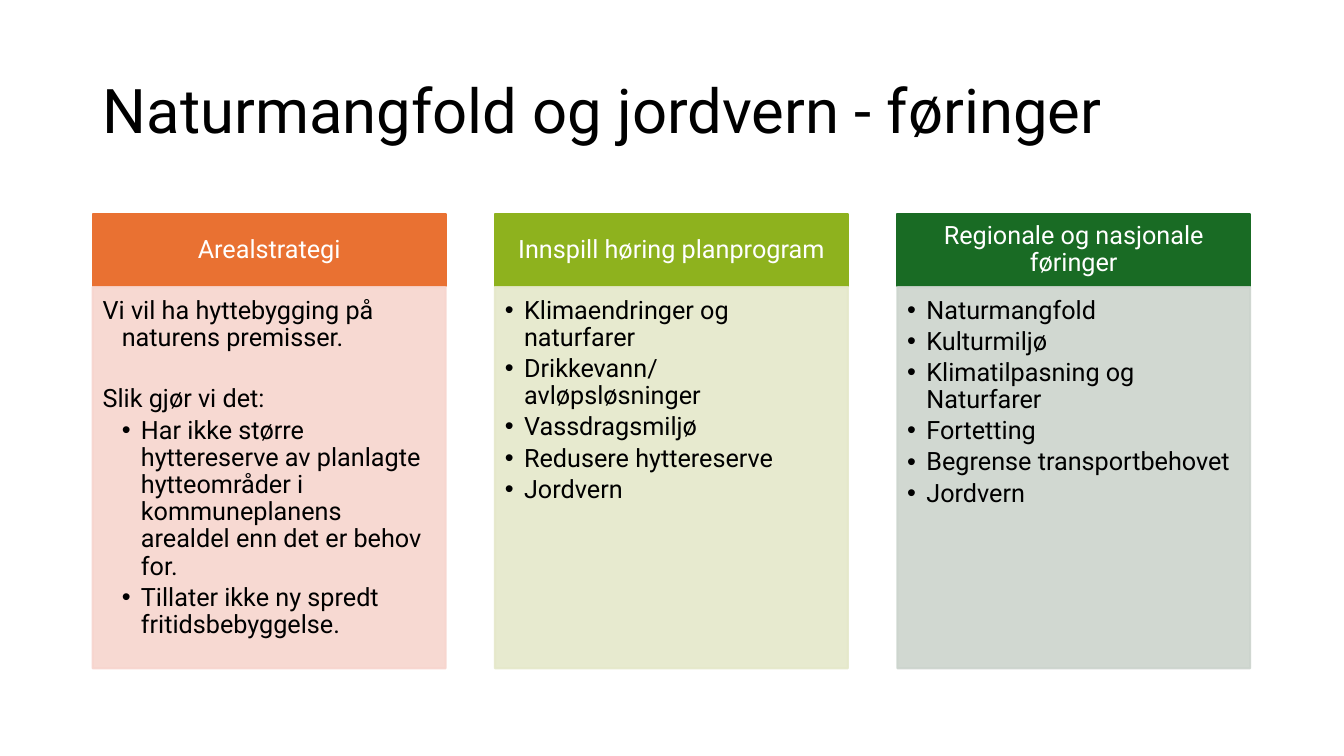
from lxml import etree
from pptx import Presentation
from pptx import util as u
from pptx.dml.color import RGBColor
from pptx.enum import shapes, text
from pptx.oxml.ns import qn

TITLE = "Naturmangfold og jordvern - føringer"
PLAIN, BULLET, SUB_BULLET = "plain", "bullet", "sub-bullet"
COLUMNS = [
    ("Arealstrategi", "E97132", "F7D5CE", [
        (PLAIN, 0, "Vi vil ha hyttebygging på naturens premisser."),
        (PLAIN, 21.7, "Slik gjør vi det:"),
        (SUB_BULLET, 0, "Har ikke større hyttereserve av planlagte hytteområder i "
                        "kommuneplanens arealdel enn det er behov for."),
        (SUB_BULLET, 0, "Tillater ikke ny spredt fritidsbebyggelse."),
    ]),
    ("Innspill høring planprogram", "8EB21E", "E5E8CA", [
        (BULLET, 0, "Klimaendringer og naturfarer"),
        (BULLET, 0, "Drikkevann/avløpsløsninger"),
        (BULLET, 0, "Vassdragsmiljø"),
        (BULLET, 0, "Redusere hyttereserve"),
        (BULLET, 0, "Jordvern"),
    ]),
    ("Regionale og nasjonale føringer", "196B24", "CCD4CD", [
        (BULLET, 0, "Naturmangfold"),
        (BULLET, 0, "Kulturmiljø"),
        (BULLET, 0, "Klimatilpasning og Naturfarer"),
        (BULLET, 0, "Fortetting"),
        (BULLET, 0, "Begrense transportbehovet"),
        (BULLET, 0, "Jordvern"),
    ]),
]
FONT = "Roboto"
LEFT, TOP, WIDTH, PITCH = 0.92, 2.12, 3.53, 3.99
COLUMN_WIDTH = 3.5
HEADER_HEIGHT, BODY_TOP, BODY_HEIGHT = 0.72, 2.85, 3.78
INDENT = 0.19


def color(hex_code):
    return RGBColor.from_string(hex_code)


def style_para(para, size, hex_code):
    para.line_spacing = 0.9
    for span in para.runs:
        span.font.name = FONT
        span.font.size = u.Pt(size)
        span.font.color.rgb = color(hex_code)


def set_frame(frame, anchor, insets):
    frame.word_wrap = True
    frame.vertical_anchor = anchor
    frame.margin_left, frame.margin_top, frame.margin_right, frame.margin_bottom = (
        u.Inches(inset) for inset in insets)


def add_panel(page, left, top, height, hex_code, opacity=100):
    panel = page.shapes.add_shape(
        shapes.MSO_SHAPE.RECTANGLE, u.Inches(left), u.Inches(top),
        u.Inches(COLUMN_WIDTH), u.Inches(height))
    panel.shadow.inherit = False
    panel.line.width = u.Pt(1.5)
    for fill in (panel.fill, panel.line.fill):
        fill.solid()
        fill.fore_color.rgb = color(hex_code)
    if opacity < 100:
        for tint in panel.element.spPr.iter(qn("a:srgbClr")):
            etree.SubElement(tint, qn("a:alpha"), val=str(opacity * 1000))
    return panel


def indent_para(para, kind):
    props = para._p.get_or_add_pPr()
    level = 2 if kind == SUB_BULLET else 1
    props.set("marL", str(u.Inches(INDENT * level)))
    props.set("indent", str(-u.Inches(INDENT)))
    if kind == PLAIN:
        etree.SubElement(props, qn("a:buNone"))
    else:
        etree.SubElement(props, qn("a:buFont"), typeface="Arial")
        etree.SubElement(props, qn("a:buChar"), char="•")


def add_header(page, left, label, hex_code):
    header = add_panel(page, left, TOP, HEADER_HEIGHT, hex_code)
    set_frame(header.text_frame, text.MSO_ANCHOR.MIDDLE, (0.14, 0.08, 0.14, 0.08))
    header.text_frame.text = label
    para = header.text_frame.paragraphs[0]
    para.alignment = text.PP_ALIGN.CENTER
    style_para(para, 18, "FFFFFF")


def add_body(page, left, items, hex_code):
    body = add_panel(page, left, BODY_TOP, BODY_HEIGHT, hex_code, 90)
    frame = body.text_frame
    set_frame(frame, text.MSO_ANCHOR.TOP, (0.1, 0.1, 0.14, 0.16))
    frame.text = "\n".join(words for _, _, words in items)
    for para, (kind, before, _) in zip(frame.paragraphs, items):
        indent_para(para, kind)
        para.alignment = text.PP_ALIGN.LEFT
        para.space_before = u.Pt(before)
        para.space_after = u.Pt(2.8)
        style_para(para, 18, "000000")


def main():
    deck = Presentation()
    deck.slide_width, deck.slide_height = u.Inches(13.33), u.Inches(7.5)
    page = deck.slides.add_slide(deck.slide_layouts[5])

    title = page.shapes.title
    title.left, title.top = u.Inches(LEFT), u.Inches(0.4)
    title.width, title.height = u.Inches(11.5), u.Inches(1.45)
    set_frame(title.text_frame, text.MSO_ANCHOR.MIDDLE, (0.1, 0.05, 0.1, 0.05))
    title.text_frame.text = TITLE
    title.text_frame.paragraphs[0].alignment = text.PP_ALIGN.LEFT
    style_para(title.text_frame.paragraphs[0], 44, "000000")

    for index, (label, header_color, body_color, items) in enumerate(COLUMNS):
        left = LEFT + index * PITCH
        add_header(page, left, label, header_color)
        add_body(page, left, items, body_color)

    deck.save("out.pptx")


if __name__ == "__main__":
    main()
